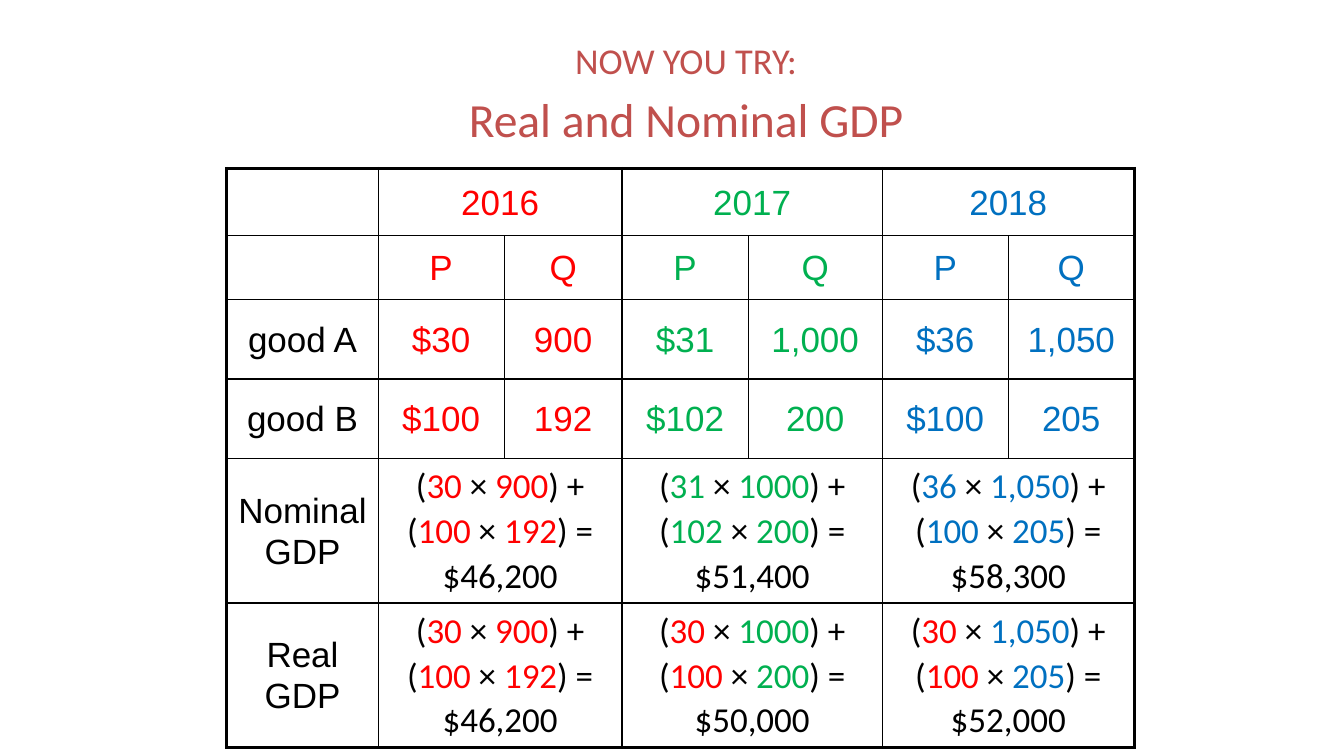
from lxml import etree
from pptx import Presentation
from pptx.dml.color import RGBColor
from pptx.enum.text import MSO_ANCHOR, MSO_AUTO_SIZE, PP_ALIGN
from pptx.oxml.ns import qn
from pptx.util import Inches, Pt

MIDDLE = MSO_ANCHOR.MIDDLE
CENTER = PP_ALIGN.CENTER
NO_FIT = MSO_AUTO_SIZE.NONE
TITLE_ONLY = 5

COLORS = {
    "title": "C0504D", "ink": "000000", "paper": "FFFFFF",
    "2016": "FF0000", "2017": "00B050", "2018": "0070C0",
}
GOODS = ["good A", "good B"]
YEARS = [
    {"year": "2016", "prices": ["30", "100"], "quantities": ["900", "192"],
     "factors": ["900", "192"], "nominal": "$46,200", "real": "$46,200"},
    {"year": "2017", "prices": ["31", "102"], "quantities": ["1,000", "200"],
     "factors": ["1000", "200"], "nominal": "$51,400", "real": "$50,000"},
    {"year": "2018", "prices": ["36", "100"], "quantities": ["1,050", "205"],
     "factors": ["1,050", "205"], "nominal": "$58,300", "real": "$52,000"},
]
BASE = YEARS[0]
COLUMNS = [1.5, 1.25, 1.17, 1.25, 1.33, 1.25, 1.25]
ROWS = [0.67, 0.63, 0.79, 0.79, 1.43, 1.43]
NOMINAL_ROW, REAL_ROW = 4, 5
TITLE_BOX = (2.37, 0.23, 8.87, 1.31)
TABLE_BOX = (2.25, 1.67, sum(COLUMNS), sum(ROWS))
INNER_LINE, OUTER_LINE = 1, 2.25


def add_span(para, text, size=25, font="Arial", color="ink"):
    span = para.add_run()
    span.text = text
    span.font.size = Pt(size)
    span.font.name = font
    span.font.color.rgb = RGBColor.from_string(COLORS[color])


def add_title(page, box):
    title = page.shapes.title
    title.left, title.top, title.width, title.height = map(Inches, box)
    frame = title.text_frame
    frame.word_wrap = True
    frame.auto_size = NO_FIT
    frame.vertical_anchor = MIDDLE
    para = frame.paragraphs[0]
    para.alignment = CENTER
    para.line_spacing = 1.15
    add_span(para, "NOW YOU TRY:", size=26, font="Calibri", color="title")
    para.add_line_break()
    add_span(para, "Real and Nominal GDP", size=34, font="Calibri", color="title")


def set_borders(cell, row, column):
    at_edge = {
        "L": column == 0, "R": column == len(COLUMNS) - 1,
        "T": row == 0, "B": row == len(ROWS) - 1,
    }
    if cell.is_merge_origin:
        at_edge["R"] = column + cell.span_width == len(COLUMNS)
    properties = cell._tc.get_or_add_tcPr()
    for side, outer in at_edge.items():
        width = Pt(OUTER_LINE if outer else INNER_LINE)
        line = etree.SubElement(properties, qn(f"a:ln{side}"), w=str(width))
        fill = etree.SubElement(line, qn("a:solidFill"))
        etree.SubElement(fill, qn("a:srgbClr"), val=COLORS["ink"])


def style_cell(cell, row, column):
    set_borders(cell, row, column)
    cell.fill.solid()
    cell.fill.fore_color.rgb = RGBColor.from_string(COLORS["paper"])
    cell.vertical_anchor = MIDDLE
    para = cell.text_frame.paragraphs[0]
    para.alignment = CENTER
    para.line_spacing = 1.05
    para.font.size = Pt(25)


def write_cell(cell, text, color="ink"):
    add_span(cell.text_frame.paragraphs[0], text, color=color)


def write_formula(cell, price_year, entry, total):
    (price_a, price_b), (factor_a, factor_b) = price_year["prices"], entry["factors"]
    price_color, factor_color = price_year["year"], entry["year"]
    spans = [
        ("(", "ink"), (f"{price_a} ", price_color), ("× ", "ink"),
        (factor_a, factor_color), (") + (", "ink"),
        (f"{price_b} ", price_color), ("× ", "ink"),
        (factor_b, factor_color), (f") = {total}", "ink"),
    ]
    for text, color in spans:
        add_span(cell.text_frame.paragraphs[0], text, font="Calibri", color=color)


def write_year(table, column, entry):
    year = entry["year"]
    write_cell(table.cell(0, column), year, year)
    write_cell(table.cell(1, column), "P", year)
    write_cell(table.cell(1, column + 1), "Q", year)
    pairs = zip(entry["prices"], entry["quantities"])
    for row, (price, quantity) in enumerate(pairs, start=2):
        write_cell(table.cell(row, column), f"${price}", year)
        write_cell(table.cell(row, column + 1), quantity, year)
    write_formula(table.cell(NOMINAL_ROW, column), entry, entry, entry["nominal"])
    write_formula(table.cell(REAL_ROW, column), BASE, entry, entry["real"])


def add_gdp_table(page, box):
    table = page.shapes.add_table(len(ROWS), len(COLUMNS), *map(Inches, box)).table
    table.first_row = False
    table.horz_banding = False
    for column, width in zip(table.columns, COLUMNS):
        column.width = Inches(width)
    for row, height in zip(table.rows, ROWS):
        row.height = Inches(height)
    for row in (0, NOMINAL_ROW, REAL_ROW):
        for column in range(1, len(COLUMNS), 2):
            table.cell(row, column).merge(table.cell(row, column + 1))
    for row in range(len(ROWS)):
        for column in range(len(COLUMNS)):
            style_cell(table.cell(row, column), row, column)
    for row, label in enumerate(GOODS + ["Nominal GDP", "Real GDP"], start=2):
        write_cell(table.cell(row, 0), label)
    for index, entry in enumerate(YEARS):
        write_year(table, 1 + 2 * index, entry)


def main():
    deck = Presentation()
    deck.slide_width, deck.slide_height = Inches(13.33), Inches(7.5)
    page = deck.slides.add_slide(deck.slide_layouts[TITLE_ONLY])
    add_title(page, TITLE_BOX)
    add_gdp_table(page, TABLE_BOX)
    deck.save("out.pptx")


if __name__ == "__main__":
    main()
